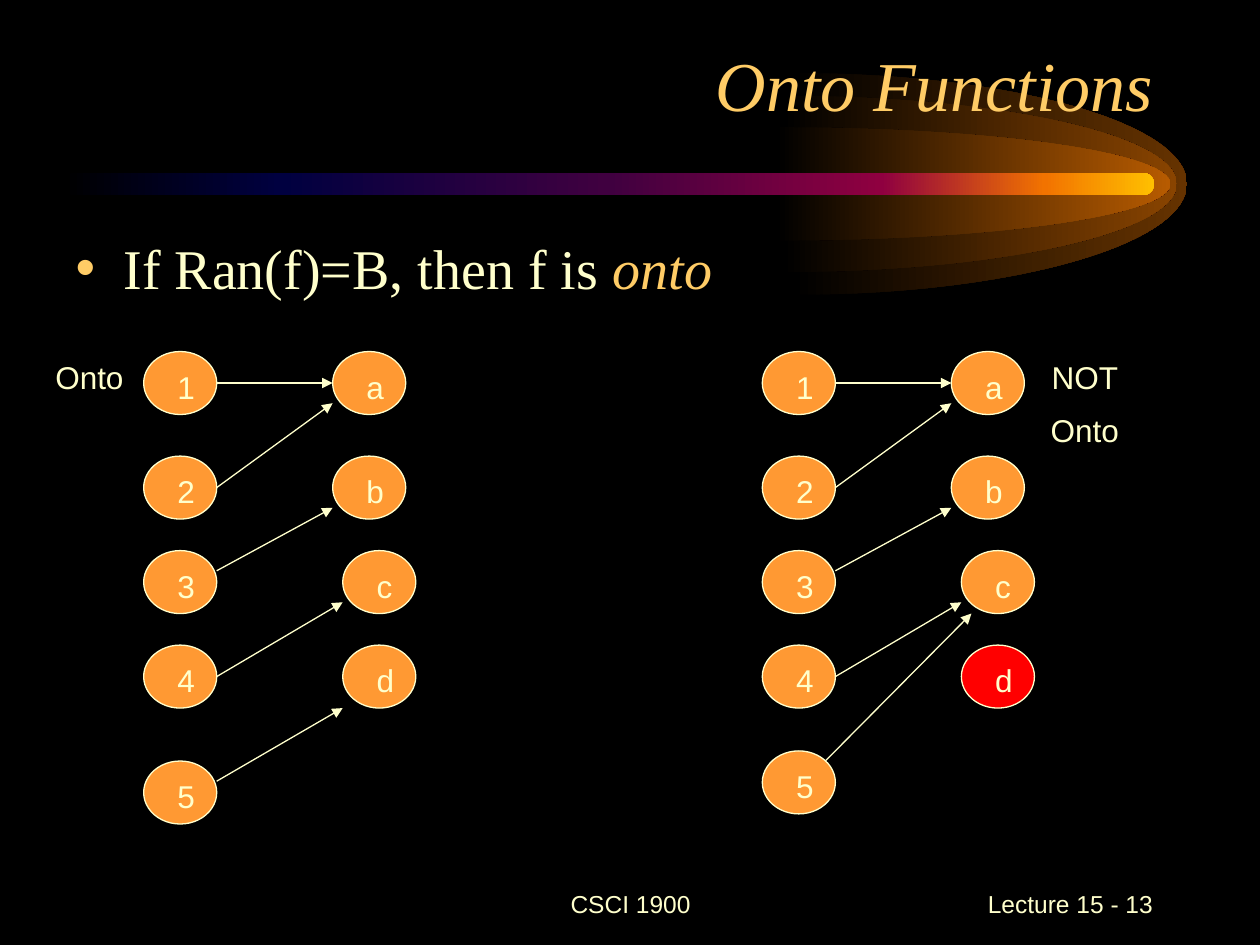
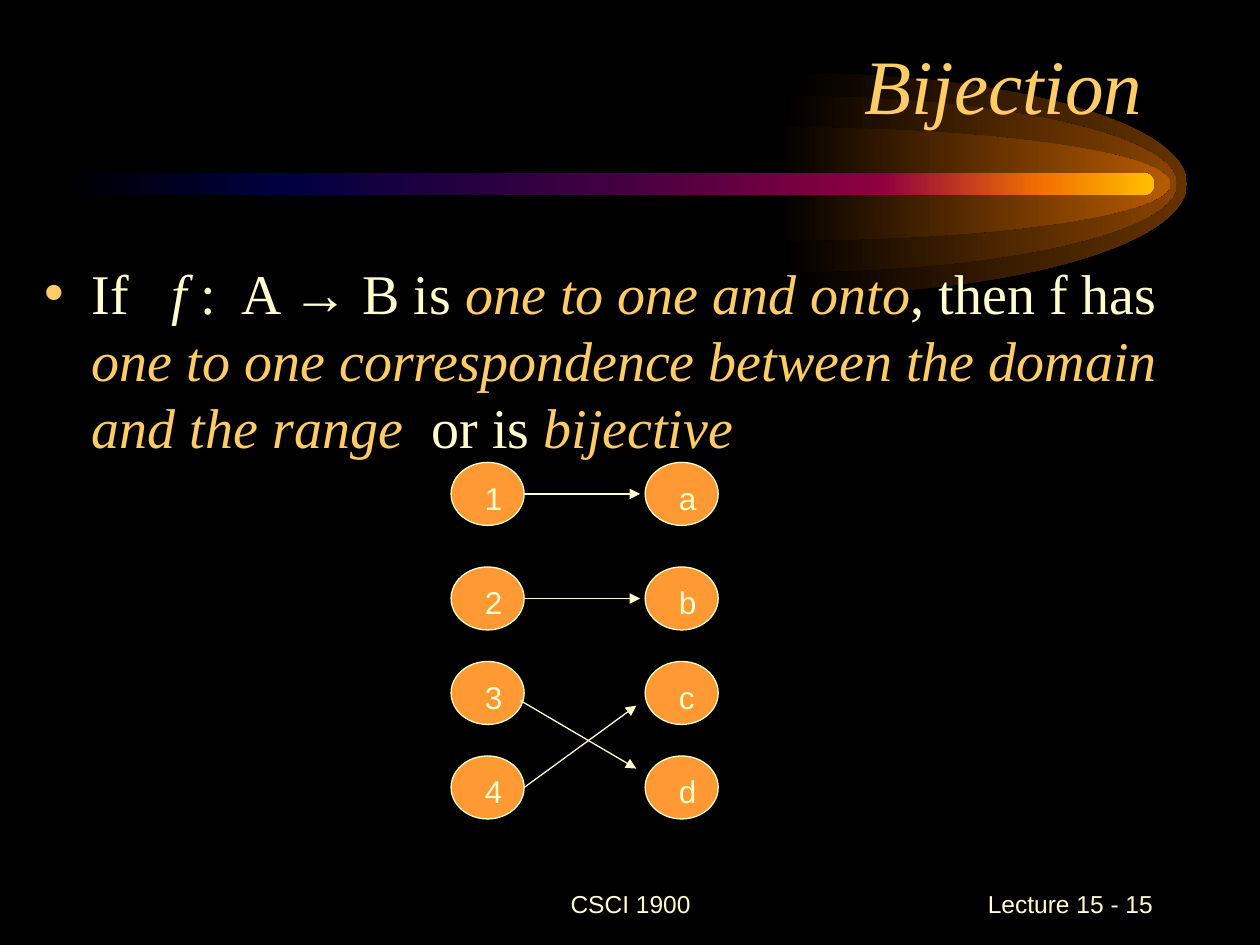
from dataclasses import dataclass

from pptx import Presentation
from pptx.dml.color import RGBColor as Rgb
from pptx.enum.shapes import MSO_CONNECTOR as Wire, MSO_SHAPE as Form
from pptx.enum.text import MSO_ANCHOR as Anchor, MSO_AUTO_SIZE as Fit, PP_ALIGN as Align
from pptx.oxml.ns import qn
from pptx.oxml.xmlchemy import OxmlElement as Node
from pptx.util import Inches, Pt


@dataclass(frozen=True)
class Theme:
    back: str = "000000"
    text: str = "FFFFCC"
    gold: str = "FFCC66"
    disc: str = "FF9933"
    alert: str = "FF0000"
    serif: str = "Times New Roman"
    sans: str = "Arial"
    body: int = 32
    label: int = 18
    foot: int = 14
    glow: tuple = (
        (6.29, 0.88, "663300"), (6.21, 0.7, "894400"), (6.16, 0.45, "B75B00"))
    beam: tuple = (
        (0, "000000"), (20, "000040"), (50, "400040"),
        (75, "8F0040"), (90, "F27300"), (100, "FFBF00"))


T = Theme()
WIDE, HIGH = 0.58, 0.5
STEPS = (0, 0.83, 1.58, 2.33)
OUT, UPPER = (WIDE, 0.25), (WIDE, 0.16)
INTO, LOWER, BASE = (0, 0.25), (0, 0.41), (0, HIGH)
LINKS = [("1", OUT, "a", INTO), ("2", OUT, "a", LOWER),
         ("3", UPPER, "b", LOWER), ("4", OUT, "c", LOWER)]

PLAIN = {"color": T.text, "italic": False}
TERM = {"color": T.gold, "italic": True}


def apply(item, form):
    for key, value in form.items():
        setattr(item, key, value)


def box(nums):
    return [Inches(n) for n in nums]


def add_run(para, text, size, face, color, italic=False, gap=0):
    run = para.add_run()
    run.text = text
    apply(run.font, {"size": Pt(size), "name": face, "italic": italic})
    run.font.color.rgb = Rgb.from_string(color)
    if gap:
        run.font._element.set("spc", str(gap * 100))


def place(shape, area, anchor):
    apply(shape, dict(zip(("left", "top", "width", "height"), box(area))))
    apply(shape.text_frame, {
        "word_wrap": True, "auto_size": Fit.NONE, "vertical_anchor": anchor})


def add_text(slide, area, lines, size=T.label, align=Align.LEFT, anchor=Anchor.TOP):
    shape = slide.shapes.add_textbox(*box(area))
    place(shape, area, anchor)
    frame = shape.text_frame
    for i, line in enumerate(lines):
        para = frame.add_paragraph() if i else frame.paragraphs[0]
        apply(para, {"alignment": align, "space_before": Pt(9 if i else 0)})
        add_run(para, line, size, T.sans, T.text)


def paint(shape, stops):
    shape.shadow.inherit = False
    shape.line.fill.background()
    shape.fill.gradient()
    shape.fill.gradient_angle = 0
    bands = shape._element.spPr.find(".//" + qn("a:gsLst"))
    for old in list(bands):
        bands.remove(old)
    for spot, color in stops:
        stop, tint = Node("a:gs"), Node("a:srgbClr")
        stop.set("pos", str(spot * 1000))
        tint.set("val", color)
        stop.append(tint)
        bands.append(stop)


def bend(shape):
    lines = list(shape._element.iter(qn("a:lnTo")))
    for i in range(0, len(lines), 3):
        curve = Node("a:cubicBezTo")
        lines[i].addprevious(curve)
        for line in lines[i:i + 3]:
            curve.append(line[0])
            line.getparent().remove(line)


def add_glow(slide, left, rise, color):
    mid, reach, pull = 1.46, 3.13, 0.55
    turns = [(0, -1), (pull, -1), (1, -pull), (1, 0), (1, pull), (pull, 1), (0, 1)]
    spots = [box((left + reach * x, mid + rise * y)) for x, y in turns]
    pen = slide.shapes.build_freeform(*spots[0])
    pen.add_line_segments(spots[1:], close=True)
    glow = pen.convert_to_shape()
    bend(glow)
    paint(glow, ((0, T.back), (100, color)))
    return glow


def add_comet(slide, master):
    parts = [add_glow(slide, *ring) for ring in T.glow]
    beam = slide.shapes.add_shape(Form.ROUNDED_RECTANGLE, *box((0.5, 1.37, 8.66, 0.18)))
    beam.adjustments[0] = 0.5
    paint(beam, T.beam)
    tree = master.shapes._spTree
    for i, part in enumerate(parts + [beam]):
        part._element.nvSpPr.cNvPr.set("id", str(20 + i))
        tree.insert(2 + i, part._element)


def add_title(slide, text, area, size):
    shape = slide.shapes.title
    place(shape, area, Anchor.BOTTOM)
    para = shape.text_frame.paragraphs[0]
    para.alignment = Align.RIGHT
    add_run(para, text, size, T.serif, **TERM)


def add_bullet(slide, area, parts):
    shape = slide.placeholders[1]
    place(shape, area, Anchor.TOP)
    para = shape.text_frame.paragraphs[0]
    para.space_before = Pt(6)
    props = para._p.get_or_add_pPr()
    props.set("marL", str(Inches(0.38)))
    props.set("indent", str(-Inches(0.38)))
    dot, tint, mark = Node("a:buClr"), Node("a:srgbClr"), Node("a:buChar")
    tint.set("val", T.gold)
    mark.set("char", "•")
    dot.append(tint)
    props.extend([dot, mark])
    for text, form in parts:
        add_run(para, text, T.body, T.serif, **form)


def add_disc(slide, name, spot, color):
    x, y = spot
    disc = slide.shapes.add_shape(Form.OVAL, *box((x, y, WIDE, HIGH)))
    disc.shadow.inherit = False
    disc.fill.solid()
    disc.fill.fore_color.rgb = Rgb.from_string(color)
    disc.line.color.rgb = Rgb.from_string(T.text)
    disc.line.width = Pt(0.75)
    add_text(slide, (x + 0.17, y + 0.08, 0.33, 0.4), [name])


def add_arrow(slide, start, end):
    wire = slide.shapes.add_connector(Wire.STRAIGHT, *box(start + end))
    wire.line.color.rgb = Rgb.from_string(T.text)
    wire.line.width = Pt(0.75)
    tip = Node("a:tailEnd")
    tip.set("type", "triangle")
    wire.line._get_or_add_ln().append(tip)
    wire._element.spPr.append(Node("a:effectLst"))


def add_map(slide, left, top, shifts, links, fifth=None, missed=""):
    spots = {}
    for i, step in enumerate(STEPS):
        spots["1234"[i]] = (left, top + step)
        spots["abcd"[i]] = (left + shifts[i], top + step)
    if fifth:
        spots["5"] = (left, top + fifth)
    for name, spot in spots.items():
        add_disc(slide, name, spot, T.alert if name == missed else T.disc)
    for tail, leave, head, reach in links:
        start = tuple(a + b for a, b in zip(spots[tail], leave))
        end = tuple(a + b for a, b in zip(spots[head], reach))
        add_arrow(slide, start, end)


def add_slide(deck, page):
    slide = deck.slides.add_slide(deck.slide_layouts[1])
    for area, text, align in (
            ((3.42, 6.92, 3.17, 0.5), "CSCI 1900", Align.CENTER),
            ((7.17, 6.92, 2.08, 0.5), f"Lecture 15 - {page}", Align.RIGHT)):
        add_text(slide, area, [text], T.foot, align, Anchor.MIDDLE)
    return slide


def add_onto(deck):
    slide = add_slide(deck, 13)
    add_comet(slide, deck.slide_master)
    add_title(slide, "Onto Functions", (0.83, 0.33, 8.42, 0.72), 40)
    add_bullet(slide, (0.5, 1.8, 9, 0.8), [
        ("If Ran(f)=B, then f is ", PLAIN), ("onto", TERM)])
    shifts = (1.5, 1.5, 1.58, 1.58)
    add_map(slide, 1.14, 2.79, shifts, LINKS + [("5", UPPER, "d", BASE)], 3.25)
    add_map(slide, 6.05, 2.79, shifts,
            LINKS + [("5", (0.5, 0.08), "c", (0.08, HIGH))], 3.17, "d")
    add_text(slide, (0.25, 2.79, 0.92, 0.4), ["Onto"], align=Align.CENTER)
    add_text(slide, (8.15, 2.79, 0.92, 0.85), ["NOT", "Onto"], align=Align.CENTER)


def add_pairs(deck):
    slide = add_slide(deck, 15)
    add_title(slide, "Bijection", (0.67, 0.25, 8.5, 0.83), 44)
    add_bullet(slide, (0.25, 2, 9.5, 1.51), [
        ("If", PLAIN), (" ", PLAIN | {"gap": 16}),
        ("f", PLAIN | {"italic": True}), (" :", PLAIN), (" ", PLAIN | {"gap": 6}),
        ("A → B is ", PLAIN), ("one to one and onto", TERM),
        (", then f has ", PLAIN),
        ("one to one correspondence between the domain and the range", TERM),
        (" ", PLAIN | {"gap": 8}), ("or is ", PLAIN), ("bijective", TERM)])
    near = (-0.04, 0.25)
    add_map(slide, 3.58, 3.67, (1.54,) * 4, [
        ("1", OUT, "a", near), ("2", OUT, "b", near),
        ("3", (0.55, 0.31), "d", (-0.07, 0.1)),
        ("4", OUT, "c", (-0.07, 0.35))])


def main():
    deck = Presentation()
    apply(deck, {"slide_width": Inches(10), "slide_height": Inches(7.5)})
    fill = deck.slide_master.background.fill
    fill.solid()
    fill.fore_color.rgb = Rgb.from_string(T.back)
    add_onto(deck)
    add_pairs(deck)
    deck.save("out.pptx")


if __name__ == "__main__":
    main()
